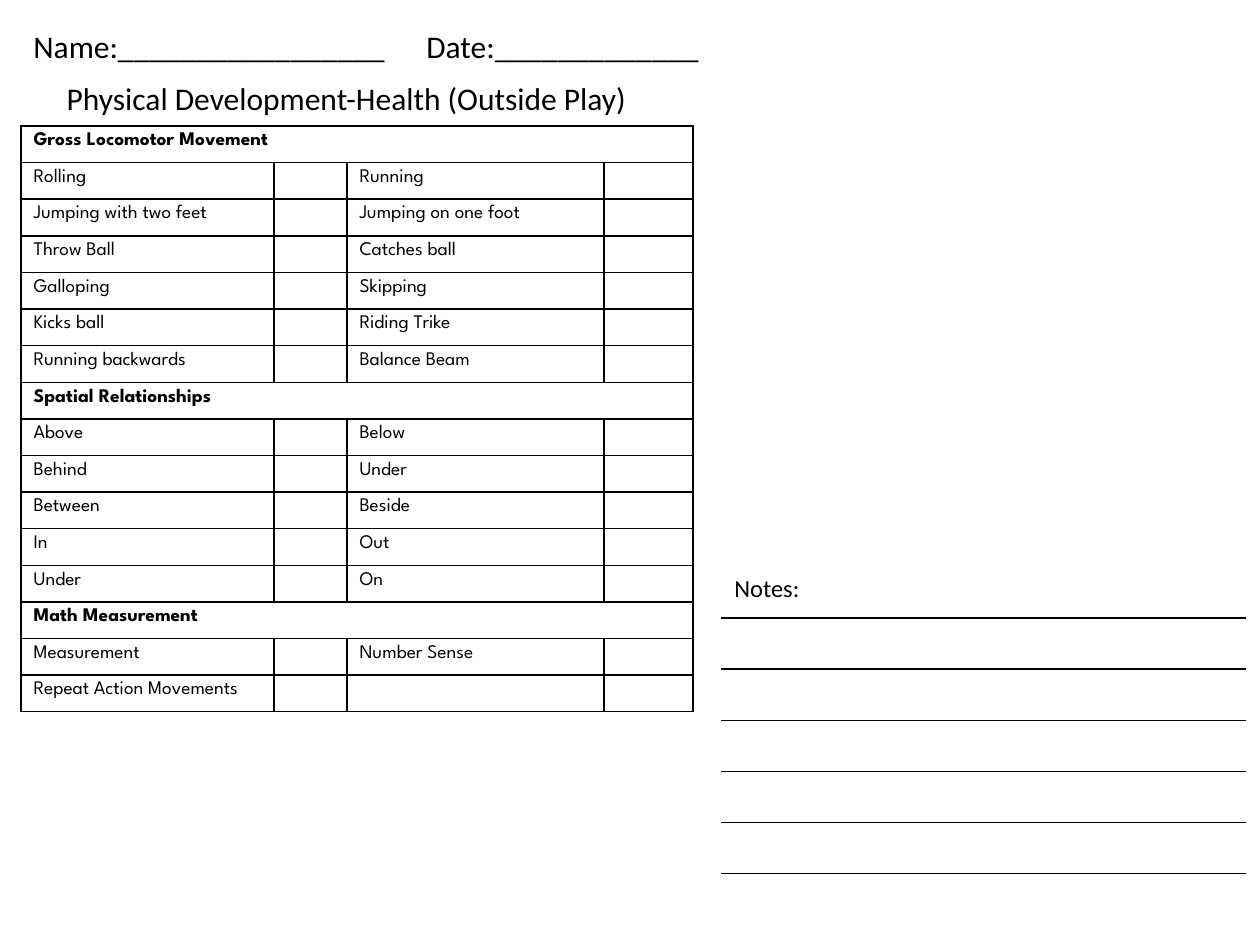
from lxml import etree
from pptx import Presentation
from pptx.dml.color import RGBColor
from pptx.enum.text import MSO_ANCHOR, MSO_AUTO_SIZE, PP_ALIGN
from pptx.oxml.ns import qn
from pptx.util import Pt

PX = 914400 // 126
BLACK = RGBColor(0x00, 0x00, 0x00)
WHITE = RGBColor(0xFF, 0xFF, 0xFF)
HEADING_FONT = "Calibri"
TABLE_FONT = "League Spartan"
PLAIN_TABLE_STYLE = "{2D5ABB26-0587-4C30-8999-92F81FD0307C}"

SKILL_COLUMNS = [253, 73, 257, 89]
SKILLS = [
    ("Gross Locomotor Movement", [
        ("Rolling", "Running"),
        ("Jumping with two feet", "Jumping on one foot"),
        ("Throw Ball", "Catches ball"),
        ("Galloping", "Skipping"),
        ("Kicks ball", "Riding Trike"),
        ("Running backwards", "Balance Beam"),
    ]),
    ("Spatial Relationships", [
        ("Above", "Below"),
        ("Behind", "Under"),
        ("Between", "Beside"),
        ("In", "Out"),
        ("Under", "On"),
    ]),
    ("Math Measurement", [
        ("Measurement", "Number Sense"),
        ("Repeat Action Movements", ""),
    ]),
]
NOTE_ROWS = 7


def px(*lengths):
    return [length * PX for length in lengths]


def add_run(paragraph, text, font, size, bold=False):
    run = paragraph.add_run()
    run.text = text
    run.font.name = font
    run.font.size = Pt(size)
    run.font.bold = bold
    run.font.color.rgb = BLACK


def add_label(slide, box, text, size):
    label = slide.shapes.add_textbox(*px(*box))
    frame = label.text_frame
    frame.word_wrap = False
    frame.auto_size = MSO_AUTO_SIZE.SHAPE_TO_FIT_TEXT
    add_run(frame.paragraphs[0], text, HEADING_FONT, size)
    return frame.paragraphs[0]


def add_tab_stop(paragraph, position):
    tabs = etree.SubElement(paragraph._p.get_or_add_pPr(), qn("a:tabLst"))
    etree.SubElement(tabs, qn("a:tab"), pos=str(position * PX), algn="l")


def set_title(slide, box, text):
    title = slide.shapes.title
    title.left, title.top, title.width, title.height = px(*box)
    frame = title.text_frame
    frame.word_wrap = True
    frame.auto_size = MSO_AUTO_SIZE.SHAPE_TO_FIT_TEXT
    frame.vertical_anchor = MSO_ANCHOR.TOP
    frame.paragraphs[0].alignment = PP_ALIGN.CENTER
    add_run(frame.paragraphs[0], text, HEADING_FONT, 18)


def add_plain_table(slide, rows, columns, box):
    table = slide.shapes.add_table(rows, columns, *px(*box)).table
    table.first_row = table.horz_banding = False
    table._tbl.tblPr.find(qn("a:tableStyleId")).text = PLAIN_TABLE_STYLE
    return table


def format_cell(cell, sides):
    """Rule the given sides (L, R, T, B) in black and fill the cell white."""
    properties = cell._tc.get_or_add_tcPr()
    for side in "LRTB":
        if side in sides:
            line = etree.SubElement(properties, qn(f"a:ln{side}"), w=str(Pt(1)))
            fill = etree.SubElement(line, qn("a:solidFill"))
            etree.SubElement(fill, qn("a:srgbClr"), val=str(BLACK))
    cell.fill.solid()
    cell.fill.fore_color.rgb = WHITE


def write_cell(cell, text, bold=False):
    paragraph = cell.text_frame.paragraphs[0]
    if text:
        add_run(paragraph, text, TABLE_FONT, 11, bold)
    else:
        # Keeps an empty cell from growing its row
        paragraph._p.get_or_add_endParaRPr().set("sz", "1100")


def add_skills_table(slide, box):
    rows = []
    for section, pairs in SKILLS:
        rows.append((section, "", "", ""))
        rows += [(left, "", right, "") for left, right in pairs]
    sections = [section for section, _ in SKILLS]

    table = add_plain_table(slide, len(rows), len(SKILL_COLUMNS), box)
    for column, width in zip(table.columns, SKILL_COLUMNS):
        column.width = width * PX
    for r, texts in enumerate(rows):
        is_section = texts[0] in sections
        for c, text in enumerate(texts):
            format_cell(table.cell(r, c), "LRTB")
            write_cell(table.cell(r, c), text, is_section)
        if is_section:
            table.cell(r, 0).merge(table.cell(r, len(texts) - 1))


def add_note_lines(slide, box):
    table = add_plain_table(slide, NOTE_ROWS, 1, box)
    for r in range(NOTE_ROWS):
        top = "T" if r > 0 else ""
        bottom = "B" if r < NOTE_ROWS - 1 else ""
        format_cell(table.cell(r, 0), top + bottom)


def main():
    prs = Presentation()
    prs.slide_width, prs.slide_height = px(1260, 945)
    slide = prs.slides.add_slide(prs.slide_layouts[5])

    # Heading
    set_title(slide, (21, 73, 651, 51), "Physical Development-Health (Outside Play)")
    name_and_date = add_label(
        slide, (21, 21, 702, 51), "Name:_________________\tDate:_____________", 18)
    add_tab_stop(name_and_date, 393)

    # Skills checklist
    add_skills_table(slide, (21, 126, 672, 586))

    # Notes
    add_note_lines(slide, (721, 567, 525, 358))
    add_label(slide, (722, 567, 91, 42), "Notes:", 14)

    prs.save("out.pptx")


if __name__ == "__main__":
    main()
